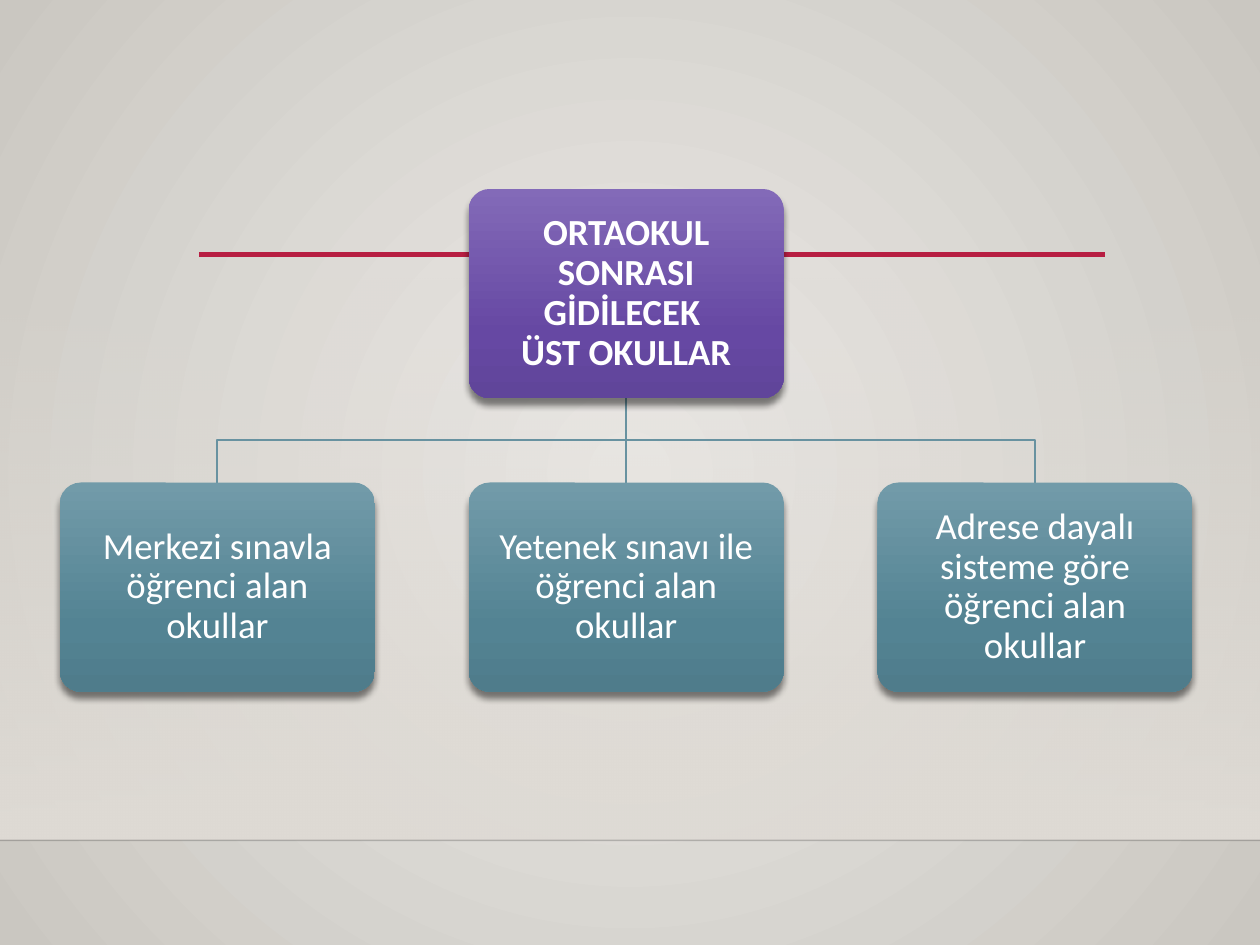
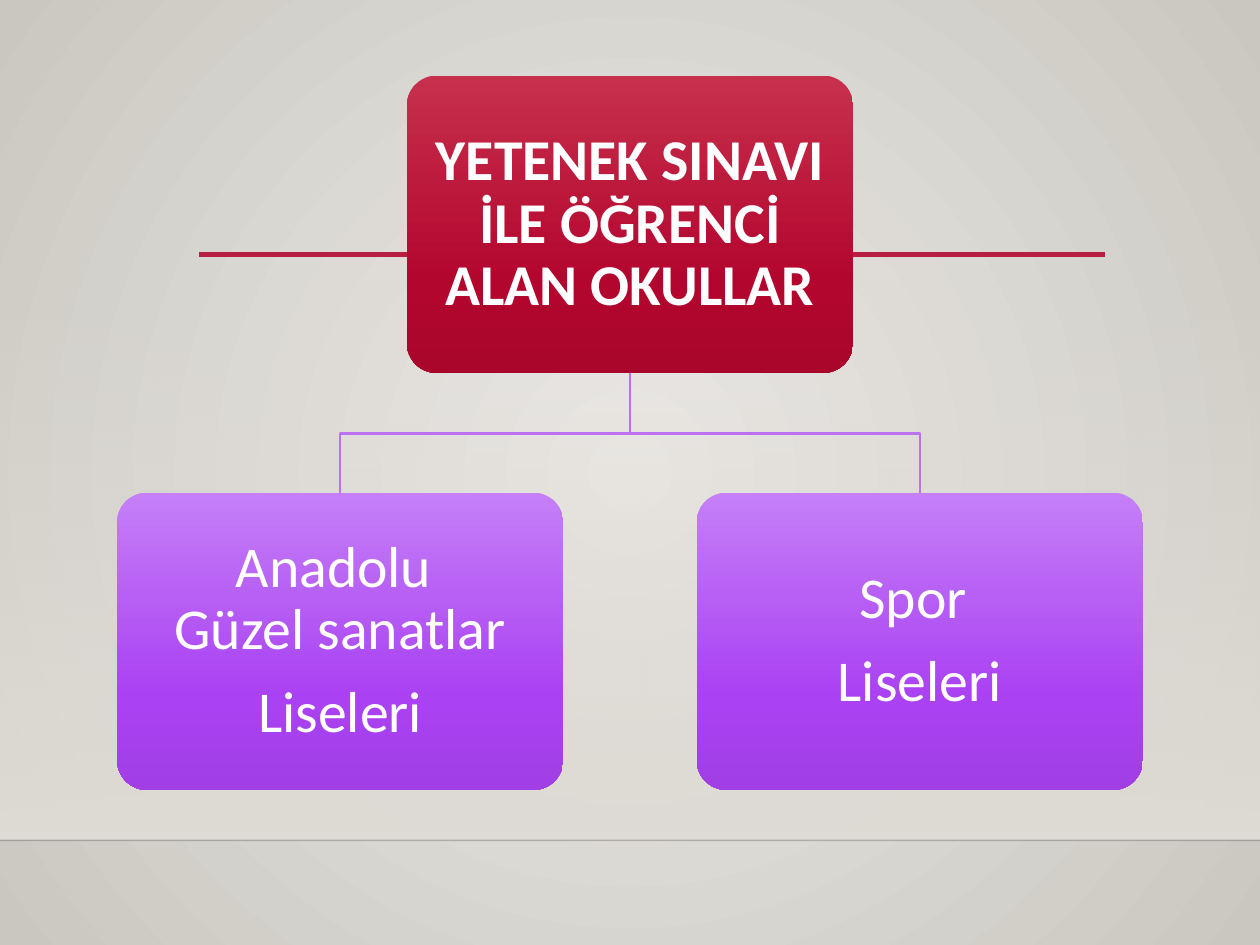
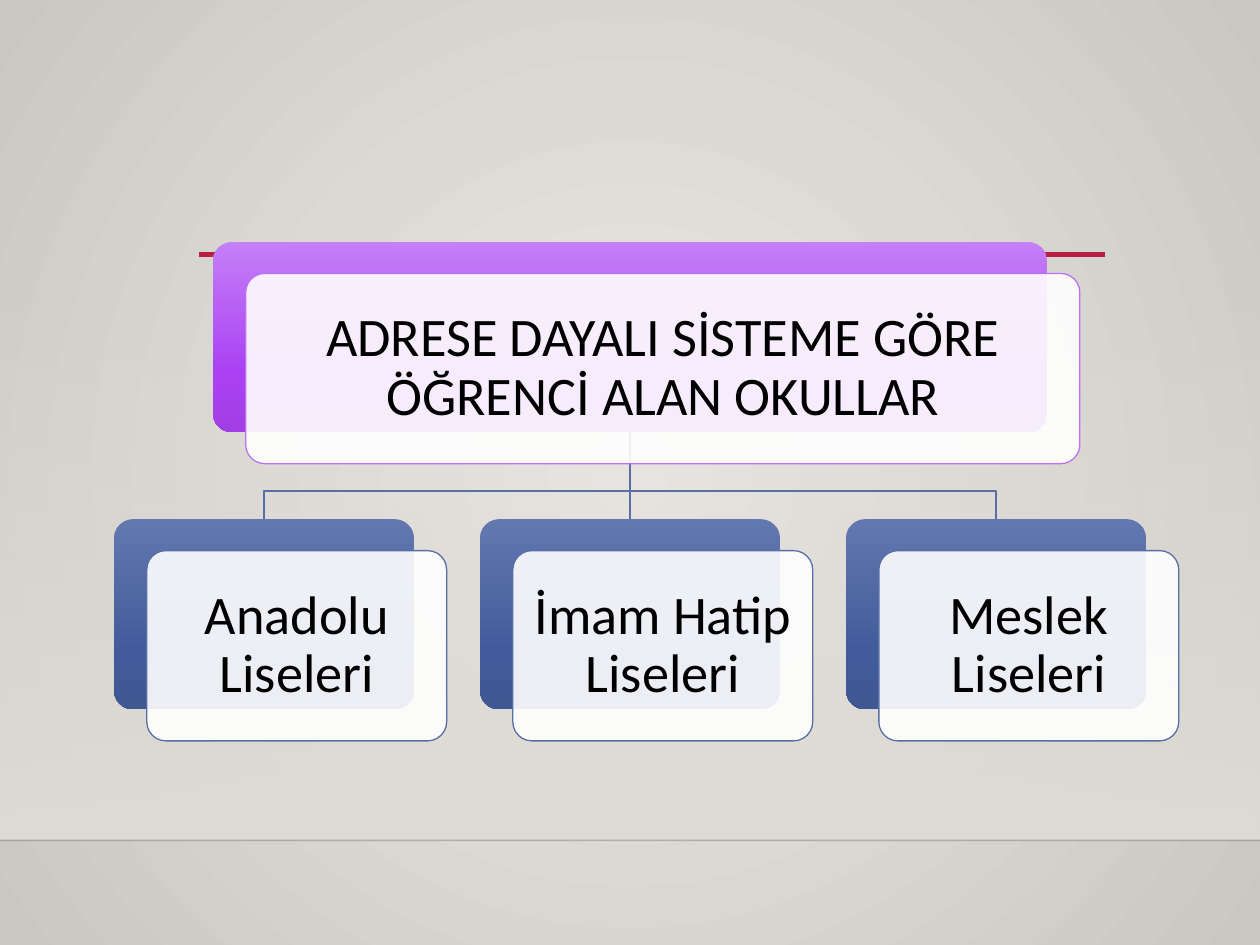
from lxml import etree
from pptx import Presentation
from pptx.dml.color import RGBColor
from pptx.enum.shapes import MSO_CONNECTOR, MSO_SHAPE
from pptx.enum.text import MSO_ANCHOR, MSO_AUTO_SIZE, PP_ALIGN
from pptx.oxml.ns import qn
from pptx.util import Inches, Pt

STRAIGHT = MSO_CONNECTOR.STRAIGHT
RECTANGLE = MSO_SHAPE.RECTANGLE
ROUNDED = MSO_SHAPE.ROUNDED_RECTANGLE
MIDDLE = MSO_ANCHOR.MIDDLE
CENTER = PP_ALIGN.CENTER
FIXED_SIZE = MSO_AUTO_SIZE.NONE

COLUMNS, ROWS = 100, 75
TITLE_ONLY = 5
FONT = "Calibri"
COLORS = {
    "center": "ECEAE7", "edge": "CAC7C1", "band": "DFDBD5",
    "floor": "000001", "accent": "B71E42",
    "white": "FFFFFF", "black": "000000",
    "teal line": "6892A0", "violet line": "BC72F0", "blue line": "586EA6",
    "purple top": "836AB8", "purple middle": "6648A3", "purple bottom": "60459A",
    "teal top": "729BA9", "teal middle": "538393", "teal bottom": "4F7C8B",
    "red top": "C7304C", "red middle": "B3062F", "red bottom": "AA062C",
    "violet top": "C57FF7", "violet middle": "AA41F3", "violet bottom": "A13FE5",
    "blue top": "6378B0", "blue middle": "425B9B", "blue bottom": "3F5793",
}


def rgb(name):
    return RGBColor.from_string(COLORS[name])


def add_node(parent, tag, **attributes):
    values = {key: str(value) for key, value in attributes.items()}
    return etree.SubElement(parent, qn(tag), values)


def set_alpha(element, percent):
    add_node(element.find(".//" + qn("a:srgbClr")), "a:alpha", val=percent * 1000)


def set_gradient(fill, element, stops, radial=False):
    fill.background()
    empty = element.find(".//" + qn("a:noFill"))
    gradient = etree.Element(qn("a:gradFill"), {"rotWithShape": "1"})
    stop_list = add_node(gradient, "a:gsLst")
    for position, name, alpha in stops:
        stop = add_node(stop_list, "a:gs", pos=position * 1000)
        color = add_node(stop, "a:srgbClr", val=COLORS[name])
        if alpha < 100:
            add_node(color, "a:alpha", val=alpha * 1000)
    if radial:
        circle = add_node(gradient, "a:path", path="circle")
        add_node(circle, "a:fillToRect", l=50000, t=50000, r=50000, b=50000)
    else:
        add_node(gradient, "a:lin", ang=5400000, scaled=0)
    empty.getparent().replace(empty, gradient)


def write_text(frame, paragraphs, *, size, color, bold=False):
    frame.word_wrap = True
    frame.auto_size = FIXED_SIZE
    frame.vertical_anchor = MIDDLE
    margin = Pt(size * 0.3)
    frame.margin_left = frame.margin_right = margin
    frame.margin_top = frame.margin_bottom = margin
    for index, text in enumerate(paragraphs):
        para = frame.add_paragraph() if index else frame.paragraphs[0]
        para.text = text
        para.alignment = CENTER
        para.line_spacing = 0.9
        para.space_after = Pt(size * 0.35)
        for span in para.runs:
            span.font.name = FONT
            span.font.size = Pt(size)
            span.font.bold = bold
            span.font.color.rgb = rgb(color)


class SchoolDeck:
    def __init__(self):
        self.deck = Presentation()
        self.deck.slide_width = Inches(10)
        self.deck.slide_height = Inches(7.5)
        master = self.deck.slide_master
        set_gradient(master.background.fill, master._element,
                     [(0, "center", 100), (100, "edge", 100)], radial=True)
        self.page = None

    def across(self, columns):
        return round(self.deck.slide_width * columns / COLUMNS)

    def down(self, rows):
        return round(self.deck.slide_height * rows / ROWS)

    def place(self, left, top, width, height):
        return self.across(left), self.down(top), self.across(width), self.down(height)

    def add_page(self):
        self.page = self.deck.slides.add_slide(self.deck.slide_layouts[TITLE_ONLY])
        band = self.page.shapes.add_shape(RECTANGLE, *self.place(0, 22, 100, 44.6))
        band.shadow.inherit = False
        set_gradient(band.fill, band._element, [(0, "band", 0), (100, "band", 100)])
        band.line.fill.background()
        floor = self.add_line((0, 66.7), (100, 66.7), "floor", 1)
        set_alpha(floor._element, 20)
        self.add_line((15.8, 20.2), (87.7, 20.2), "accent", 2.5)

    def add_line(self, start, end, color, weight):
        line = self.page.shapes.add_connector(
            STRAIGHT, self.across(start[0]), self.down(start[1]),
            self.across(end[0]), self.down(end[1]))
        add_node(line._element.spPr, "a:effectLst")
        line.line.color.rgb = rgb(color)
        line.line.width = Pt(weight)
        return line

    def add_branch(self, start, end, knee, color):
        if start[0] == end[0]:
            self.add_line(start, end, color, 1.25)
            return
        corners = [(start[0], knee), (end[0], knee), end]
        builder = self.page.shapes.build_freeform(self.across(start[0]), self.down(start[1]))
        builder.add_line_segments(
            [(self.across(x), self.down(y)) for x, y in corners], close=False)
        branch = builder.convert_to_shape()
        branch.shadow.inherit = False
        branch.fill.background()
        branch.line.color.rgb = rgb(color)
        branch.line.width = Pt(1.25)

    def add_box(self, area, hue, shadow=False):
        box = self.page.shapes.add_shape(ROUNDED, *self.place(*area))
        box.adjustments[0] = 0.1
        box.shadow.inherit = False
        set_gradient(box.fill, box._element, [
            (0, f"{hue} top", 100), (69, f"{hue} middle", 100), (100, f"{hue} bottom", 100)])
        box.line.fill.background()
        if shadow:
            effects = box._element.spPr.find(qn("a:effectLst"))
            outer = add_node(effects, "a:outerShdw", blurRad=Pt(4), dist=Pt(4),
                             dir=5400000, rotWithShape=0)
            color = add_node(outer, "a:srgbClr", val=COLORS["black"])
            add_node(color, "a:alpha", val=48000)

    def add_card(self, area, hue):
        card = self.page.shapes.add_shape(ROUNDED, *self.place(*area))
        card.adjustments[0] = 0.1
        card.shadow.inherit = False
        card.fill.solid()
        card.fill.fore_color.rgb = rgb("white")
        set_alpha(card._element, 90)
        card.line.color.rgb = rgb(f"{hue} line")
        card.line.width = Pt(0.75)

    def add_label(self, area, paragraphs, is_title, **text_format):
        left, top, width, height = area
        inset = height * 0.029
        bounds = self.place(left + inset, top + inset, width - 2 * inset, height - 2 * inset)
        if is_title:
            label = self.page.shapes.title
            label.left, label.top, label.width, label.height = bounds
            self.page.shapes._spTree.append(label._element)
        else:
            label = self.page.shapes.add_textbox(*bounds)
        write_text(label.text_frame, paragraphs, **text_format)

    def add_node_box(self, area, paragraphs, hue, size, *, is_title=False,
                     bold=False, shadow=False, layered=False):
        self.add_box(area, hue, shadow)
        color = "white"
        if layered:
            left, top, width, height = area
            area = (left + 2.6, top + 2.5, width, height)
            self.add_card(area, hue)
            color = "black"
        self.add_label(area, paragraphs, is_title, size=size, color=color, bold=bold)

    def add_tree(self, title, schools, *, center, pitch, top, school_top, knee, width,
                 height, hues, size, title_width=None, bold=True, **box_style):
        self.add_page()
        title_width = title_width or width
        title_hue, school_hue = hues
        middles = [center + (index - (len(schools) - 1) / 2) * pitch
                   for index in range(len(schools))]
        for middle in middles:
            self.add_branch((center, top + height), (middle, school_top), knee,
                            f"{school_hue} line")
        self.add_node_box((center - title_width / 2, top, title_width, height), [title],
                          title_hue, size, is_title=True, bold=bold, **box_style)
        for middle, paragraphs in zip(middles, schools):
            self.add_node_box((middle - width / 2, school_top, width, height), paragraphs,
                              school_hue, size, **box_style)


def main():
    schools = SchoolDeck()
    schools.add_tree(
        "ORTAOKUL SONRASI GİDİLECEK \nÜST OKULLAR",
        [["Merkezi sınavla öğrenci alan okullar"],
         ["Yetenek sınavı ile öğrenci alan okullar"],
         ["Adrese dayalı sisteme göre öğrenci alan okullar"]],
        center=49.7, pitch=32.45, top=15, school_top=38.3, knee=34.9,
        width=25, height=16.6, hues=("purple", "teal"), size=21, shadow=True)
    schools.add_tree(
        "YETENEK SINAVI İLE ÖĞRENCİ ALAN OKULLAR",
        [["Anadolu \nGüzel sanatlar", "Liseleri"], ["Spor ", "Liseleri"]],
        center=50, pitch=46, top=6, school_top=39.1, knee=34.4,
        width=35.4, height=23.6, hues=("red", "violet"), size=33)
    schools.add_tree(
        "ADRESE DAYALI SİSTEME GÖRE ÖĞRENCİ ALAN OKULLAR",
        [["Anadolu Liseleri"], ["İmam Hatip Liseleri"], ["Meslek Liseleri"]],
        center=50, pitch=29.05, top=19.2, school_top=41.2, knee=39,
        width=23.8, height=15.1, title_width=66.2, hues=("violet", "blue"),
        size=31, bold=False, layered=True)
    schools.deck.save("out.pptx")


if __name__ == "__main__":
    main()
